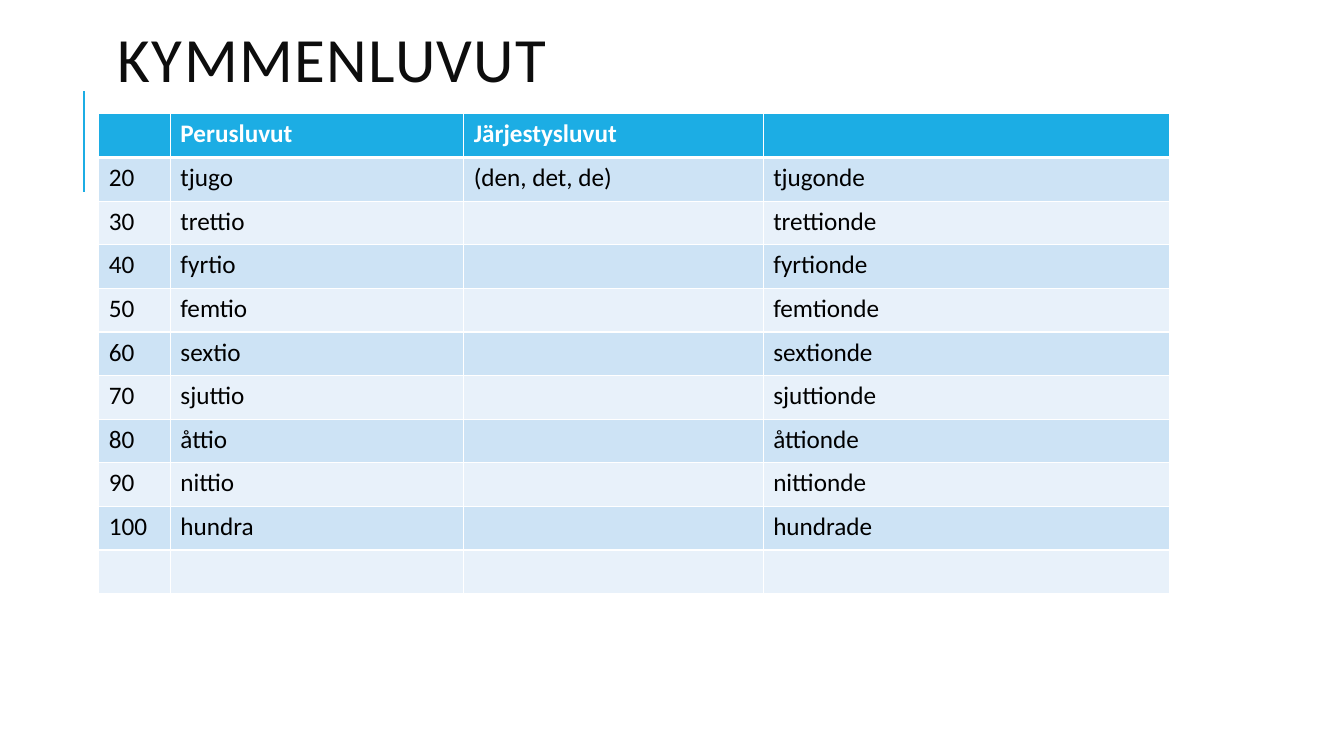
"""Build a slide with a table of Swedish tens, cardinal and ordinal."""
from lxml import etree
from pptx import Presentation, util as u
from pptx.dml.color import RGBColor
from pptx.enum import shapes, text
from pptx.oxml.ns import qn

TITLE = "KYMMENLUVUT"
HEAD = ("", "Perusluvut", "Järjestysluvut", "")
TENS = [
    ("20", "tjugo", "(den, det, de)", "tjugonde"),
    ("30", "trettio", "", "trettionde"),
    ("40", "fyrtio", "", "fyrtionde"),
    ("50", "femtio", "", "femtionde"),
    ("60", "sextio", "", "sextionde"),
    ("70", "sjuttio", "", "sjuttionde"),
    ("80", "åttio", "", "åttionde"),
    ("90", "nittio", "", "nittionde"),
    ("100", "hundra", "", "hundrade"),
    ("", "", "", ""),
]
WIDTHS = (0.71, 2.91, 2.97, 4.03)
THEME = {
    "font": "Calibri", "big": 45, "body": 18,
    "blue": "1CADE4", "bands": ("CDE3F5", "E8F1FA"),
    "white": "FFFFFF", "ink": "0D0D0D", "black": "000000",
}


def color(code):
    return RGBColor.from_string(code)


def write(frame, words, size, shade, bold=False, space=None, track=0):
    para = frame.paragraphs[0]
    para.line_spacing = space
    if not words:
        para.font.size = u.Pt(size)
        return
    run = para.add_run()
    run.text = words
    font = run.font
    font.name, font.size, font.bold = THEME["font"], u.Pt(size), bold
    font.color.rgb = color(shade)
    if track:
        run._r.get_or_add_rPr().set("spc", str(track * 100))


def border(cell, **sides):
    props = cell._tc.get_or_add_tcPr()
    for side, width in sides.items():
        line = etree.SubElement(props, qn("a:ln" + side), w=str(u.Pt(width)))
        fill = etree.SubElement(line, qn("a:solidFill"))
        etree.SubElement(fill, qn("a:srgbClr"), val=THEME["white"])


def add_title(slide):
    line = slide.shapes.add_connector(
        shapes.MSO_CONNECTOR.STRAIGHT,
        u.Inches(0.83), u.Inches(1.9), u.Inches(0.83), u.Inches(0.9))
    line.line.color.rgb = color(THEME["blue"])
    line.line.width = u.Pt(1.5)
    etree.SubElement(line._element.spPr, qn("a:effectLst"))
    box = slide.shapes.add_textbox(
        u.Inches(1.12), u.Inches(0.15), u.Inches(10.63), u.Inches(0.97))
    frame = box.text_frame
    frame.word_wrap = True
    frame.margin_left = frame.margin_right = u.Inches(0.05)
    frame.vertical_anchor = text.MSO_ANCHOR.MIDDLE
    write(frame, TITLE, THEME["big"], THEME["ink"], space=0.8, track=1)


def add_tens(slide):
    rows = [HEAD] + TENS
    table = slide.shapes.add_table(
        len(rows), len(WIDTHS), u.Inches(0.98), u.Inches(1.13),
        u.Inches(sum(WIDTHS)), u.Inches(4.76)).table
    for col, width in zip(table.columns, WIDTHS):
        col.width = u.Inches(width)
    for r, row in enumerate(rows):
        head = r == 0
        fill = THEME["blue"] if head else THEME["bands"][(r - 1) % 2]
        shade = THEME["white"] if head else THEME["black"]
        for c, words in enumerate(row):
            cell = table.cell(r, c)
            border(cell, L=1, R=1, T=3 if r == 1 else 1, B=3 if head else 1)
            cell.fill.solid()
            cell.fill.fore_color.rgb = color(fill)
            write(cell.text_frame, words, THEME["body"], shade, bold=head)


def main():
    deck = Presentation()
    deck.slide_width, deck.slide_height = u.Inches(13.33), u.Inches(7.5)
    slide = deck.slides.add_slide(deck.slide_layouts[6])
    add_title(slide)
    add_tens(slide)
    deck.save("out.pptx")


if __name__ == "__main__":
    main()
